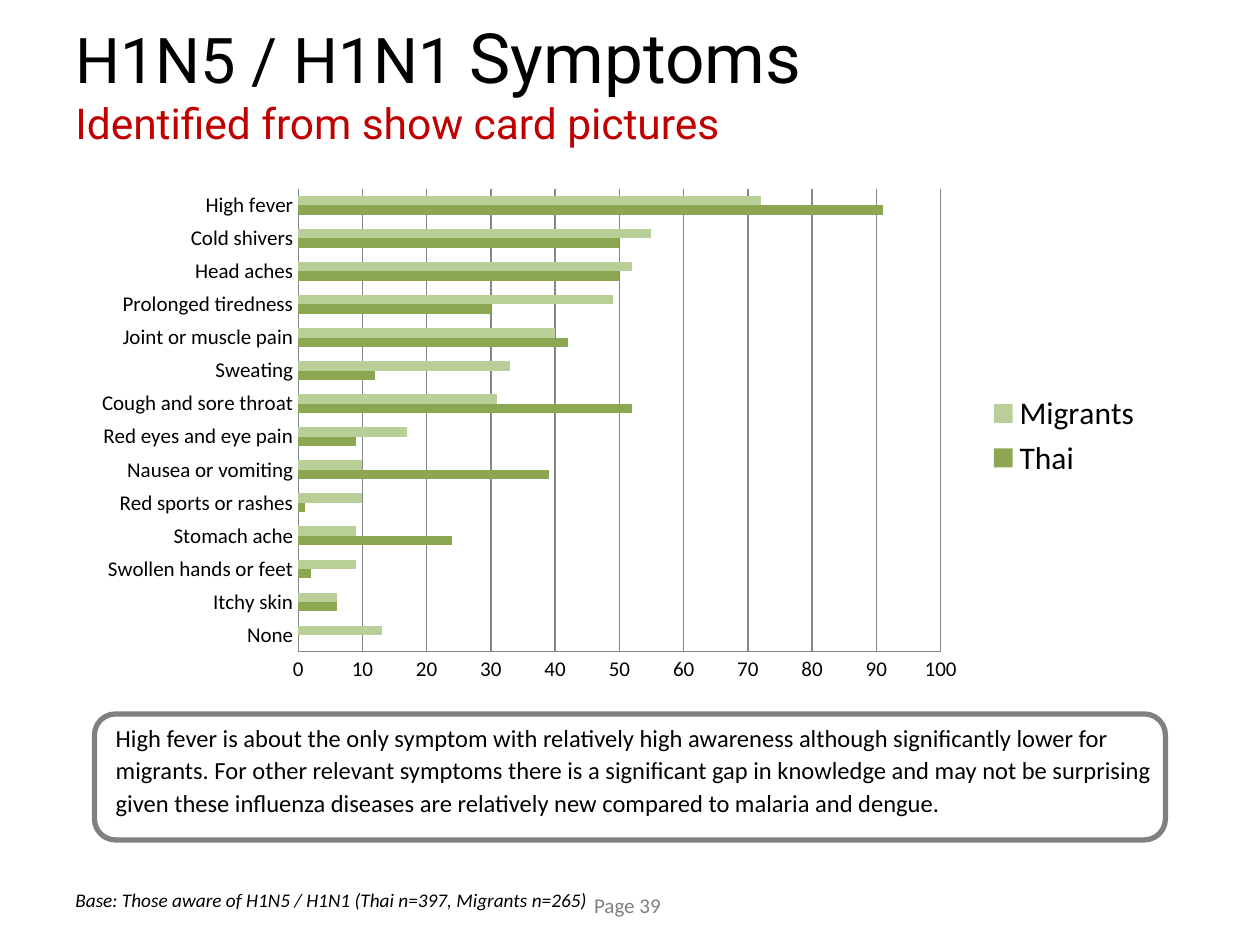
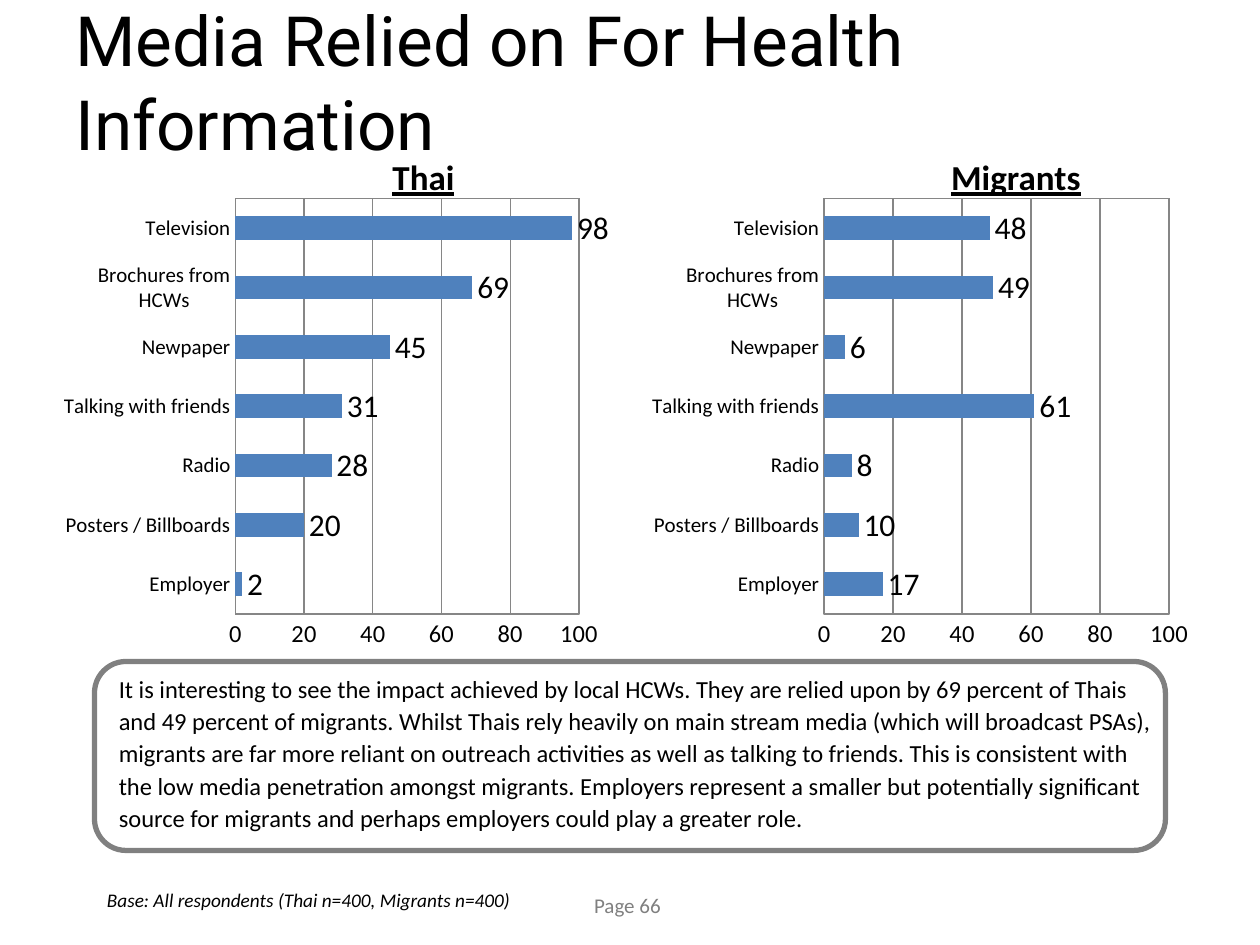
"""Build two survey slides with bar charts, notes and base lines."""
from pptx import Presentation
from pptx.chart.data import CategoryChartData
from pptx.dml.color import RGBColor
from pptx.enum.chart import XL_CHART_TYPE, XL_LABEL_POSITION, XL_LEGEND_POSITION, XL_TICK_MARK
from pptx.enum.shapes import MSO_SHAPE
from pptx.enum.text import MSO_ANCHOR, PP_ALIGN
from pptx.oxml import parse_xml
from pptx.oxml.ns import nsdecls, qn
from pptx.util import Inches, Pt

BAR = XL_CHART_TYPE.BAR_CLUSTERED
OUT = XL_LABEL_POSITION.OUTSIDE_END
RIGHT = XL_LEGEND_POSITION.RIGHT
NONE = XL_TICK_MARK.NONE
ROUND = MSO_SHAPE.ROUNDED_RECTANGLE
MIDDLE, TOP = MSO_ANCHOR.MIDDLE, MSO_ANCHOR.TOP
LEFT = PP_ALIGN.LEFT

COLORS = {"ink": "000000", "red": "C00000", "gray": "808080", "grid": "868686",
          "blue": "4F81BD", "thai": "8BA751", "migrant": "B9CF98"}
HEAD, BODY = "Roboto", "Calibri"
COLS, ROWS = 120, 90

SIGNS = ["None", "Itchy skin", "Swollen hands or feet", "Stomach ache",
         "Red sports or rashes", "Nausea or vomiting", "Red eyes and eye pain",
         "Cough and sore throat", "Sweating", "Joint or muscle pain",
         "Prolonged tiredness", "Head aches", "Cold shivers", "High fever"]
THAI = [0, 6, 2, 24, 1, 39, 9, 52, 12, 42, 30, 50, 50, 91]
MIGRANTS = [13, 6, 9, 9, 10, 10, 17, 31, 33, 40, 49, 52, 55, 72]
MEDIA = ["Employer", "Posters / Billboards", "Radio", "Talking with friends",
         "Newpaper", "Brochures from HCWs", "Television"]
PANELS = [("Thai", 5, 36.2, 8.4, [2, 20, 28, 31, 45, 69, 98]),
          ("Migrants", 61, 89.4, 14.9, [17, 10, 8, 61, 6, 49, 48])]
FEVER = ("High fever is about the only symptom with relatively high awareness although "
         "significantly lower for migrants. For other relevant symptoms there is a "
         "significant gap in knowledge and may not be surprising given these influenza "
         "diseases are relatively new compared to malaria and dengue.")
REACH = ("It is interesting to see the impact achieved by local HCWs. They are relied upon "
         "by 69 percent of Thais and 49 percent of migrants. Whilst Thais rely heavily on "
         "main stream media (which will broadcast PSAs), migrants are far more reliant on "
         "outreach activities as well as talking to friends. This is consistent with the "
         "low media penetration amongst migrants. Employers represent a smaller but "
         "potentially significant source for migrants and perhaps employers could play a "
         "greater role.")


def tint(name):
    return RGBColor.from_string(COLORS[name])


class Deck:
    """Hold the style and the current slide."""

    def __init__(self):
        self.prs = Presentation()
        self.prs.slide_width, self.prs.slide_height = Inches(10), Inches(7.5)
        self.slide = None

    def place(self, col, row, wide, high):
        x, y = self.prs.slide_width / COLS, self.prs.slide_height / ROWS
        return int(col * x), int(row * y), int(wide * x), int(high * y)

    def style(self, font, size, color="ink", face=BODY):
        font.name, font.size = face, Pt(size)
        font.color.rgb = tint(color)

    def page(self, number):
        self.slide = self.prs.slides.add_slide(self.prs.slide_layouts[6])
        self.label(f"Page {number}", 55.4, 84.4, 9.2, 3.6, 12, "gray")

    def label(self, text, col, row, wide, high, size, color="ink"):
        box = self.slide.shapes.add_textbox(*self.place(col, row, wide, high))
        box.text_frame.word_wrap = False
        para = box.text_frame.paragraphs[0]
        para.text = text
        self.style(para.font, size, color)
        return para.font

    def base(self, text, col, wide):
        self.label(text, col, 84, wide, 3.5, 11).italic = True

    def title(self, *lines):
        box = self.slide.shapes.add_textbox(*self.place(6, 3, 108, 9.4))
        frame = box.text_frame
        frame.word_wrap, frame.vertical_anchor = True, MIDDLE
        para = frame.paragraphs[0]
        for index, line in enumerate(lines):
            if index:
                para.add_line_break()
            for text, size, color in line:
                run = para.add_run()
                run.text = text
                self.style(run.font, size, color, HEAD)

    def note(self, text, row, high):
        box = self.slide.shapes.add_shape(ROUND, *self.place(9, row, 102, high))
        box.shadow.inherit = False
        box.fill.background()
        box.line.color.rgb, box.line.width = tint("gray"), Pt(3)
        frame = box.text_frame
        frame.word_wrap, frame.vertical_anchor = True, TOP
        frame.margin_top = frame.margin_right = frame.margin_bottom = 0
        frame.margin_left = Inches(0.12)
        para = frame.paragraphs[0]
        para.text, para.alignment, para.line_spacing = text, LEFT, 1.1
        self.style(para.font, 14)

    def chart(self, spot, cats, series, step, size, plot, frame=False):
        data = CategoryChartData()
        data.categories = cats
        for name, vals, _ in series:
            data.add_series(name, vals)
        chart = self.slide.shapes.add_chart(BAR, *self.place(*spot), data).chart
        self.style(chart.font, 18)
        chart.has_title = False
        chart.has_legend = len(series) > 1
        if chart.has_legend:
            chart.legend.position = RIGHT
            chart.legend.include_in_layout = False
        bars = chart.plots[0]
        bars.gap_width, bars.overlap, bars.vary_by_categories = 150, 0, False
        for item, (_, _, color) in zip(bars.series, series):
            item.format.fill.solid()
            item.format.fill.fore_color.rgb = tint(color)
        if not chart.has_legend:
            bars.has_data_labels = True
            tags = bars.data_labels
            tags.show_value, tags.position = True, OUT
            self.style(tags.font, 18)
        value = chart.value_axis
        value.minimum_scale, value.maximum_scale, value.major_unit = 0, 100, step
        value.has_major_gridlines = True
        value.major_gridlines.format.line.color.rgb = tint("grid")
        for axis, points in ((chart.category_axis, 12), (value, size)):
            axis.major_tick_mark = axis.minor_tick_mark = NONE
            axis.format.line.color.rgb = tint("grid")
            self.style(axis.tick_labels.font, points)
        self.fit(chart, plot, frame)

    def fit(self, chart, plot, frame):
        area = chart.plots[0]._element.getparent()
        for old in area.findall(qn("c:layout")):
            area.remove(old)
        marks = "".join(f'<c:{key} val="{val}"/>' for key, val in zip("xywh", plot))
        area.insert(0, parse_xml(
            f'<c:layout {nsdecls("c")}><c:manualLayout><c:layoutTarget val="inner"/>'
            f'<c:xMode val="edge"/><c:yMode val="edge"/>{marks}'
            '</c:manualLayout></c:layout>'))
        if frame:
            area.append(parse_xml(
                f'<c:spPr {nsdecls("c", "a")}><a:noFill/><a:ln w="9525"><a:solidFill>'
                f'<a:srgbClr val="{COLORS["grid"]}"/></a:solidFill></a:ln></c:spPr>'))


def main():
    deck = Deck()

    deck.page(39)
    deck.title([("H1N5 / H1N1 ", 36, "ink"), ("Symptoms", 39.6, "ink")],
               [("Identified from show card pictures", 24.3, "red")])
    deck.note(FEVER, 68, 12)
    deck.chart((8, 17, 102, 49), SIGNS,
               [("Thai", THAI, "thai"), ("Migrants", MIGRANTS, "migrant")],
               10, 12, (0.2, 0.02, 0.6, 0.9))
    deck.base("Base: Those aware of H1N5 / H1N1 (Thai n=397, Migrants n=265)", 6, 51.6)

    deck.page(66)
    deck.title([("Media Relied on For Health Information", 39.6, "ink")])
    deck.note(REACH, 63, 18)
    for name, col, head, wide, vals in PANELS:
        deck.chart((col, 18, 53, 45), MEDIA, [(name, vals, "blue")],
                   20, 14, (0.33, 0.02, 0.62, 0.88), True)
        font = deck.label(name, head, 14.2, wide, 5.2, 20)
        font.bold = font.underline = True
    deck.base("Base: All respondents (Thai n=400, Migrants n=400)", 9, 41.6)

    deck.prs.save("out.pptx")


if __name__ == "__main__":
    main()
